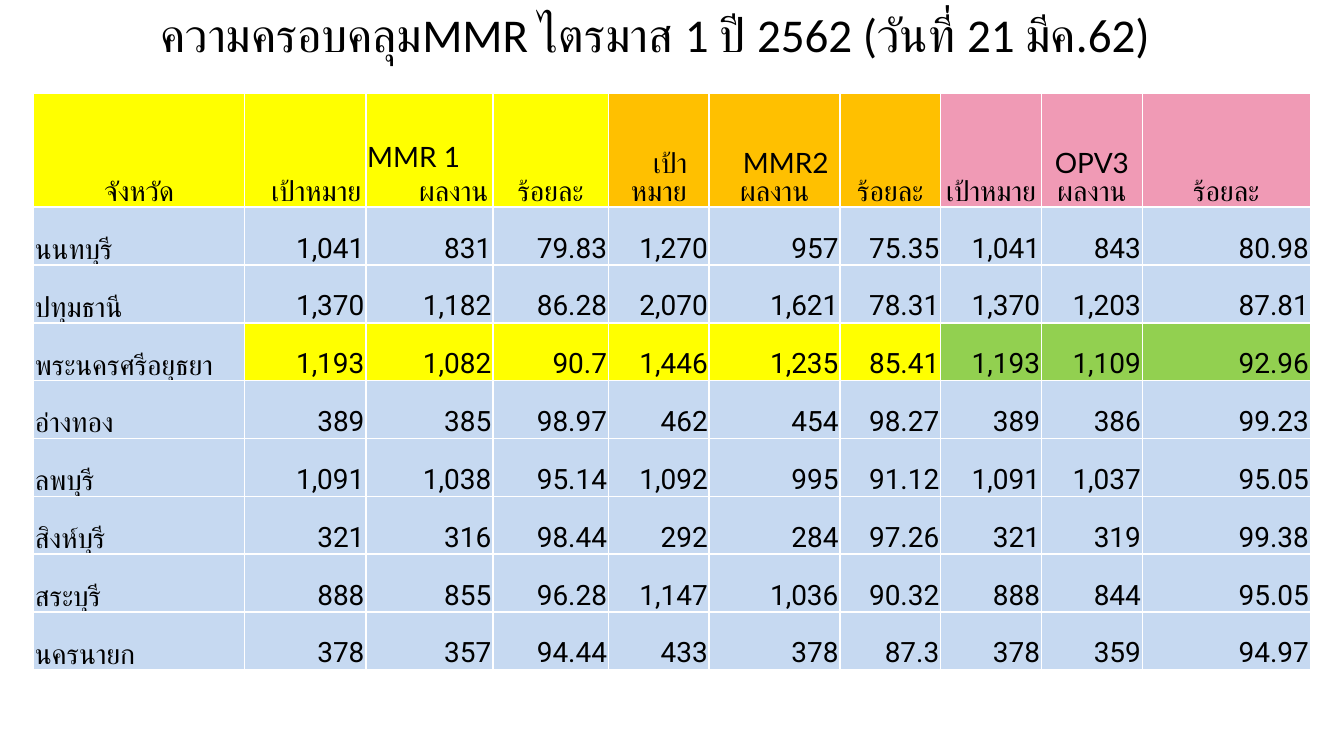
from lxml import etree
from pptx import Presentation
from pptx.dml.color import RGBColor
from pptx.enum import text
from pptx.oxml import ns
from pptx.util import Pt

COLORS = {
    "text": "000000",
    "border": "FFFFFF",
    "mmr1": "FFFF00",
    "mmr2": "FFC000",
    "opv3": "F09AB5",
    "body": "C6D9F1",
    "below_goal": "FFFF00",
    "near_goal": "92D050",
}
LEFT, CENTER, RIGHT = text.PP_ALIGN.LEFT, text.PP_ALIGN.CENTER, text.PP_ALIGN.RIGHT

COLUMN_WIDTHS = [113, 65, 68, 62, 54, 70, 54, 54, 54, 90]
HEADER_HEIGHT, ROW_HEIGHT = 61, 31
FIRST_LINE_INDENT = 12

HEADERS = ["จังหวัด", "เป้าหมาย", "MMR 1\nผลงาน", "ร้อยละ",
           "เป้าหมาย", "MMR2 ผลงาน", "ร้อยละ",
           "เป้าหมาย", "OPV3\nผลงาน", "ร้อยละ"]
HEADER_FILLS = ["mmr1"] * 4 + ["mmr2"] * 3 + ["opv3"] * 3
INDENTED_HEADERS = (1, 4, 5)
MMR1_RESULT = 2

HIGHLIGHTED = "พระนครศรีอยุธยา"
HIGHLIGHT_FILLS = ["body"] + ["below_goal"] * 6 + ["near_goal"] * 3
PROVINCES = [
    ("นนทบุรี", "1,041", "831", "79.83", "1,270", "957", "75.35", "1,041", "843", "80.98"),
    ("ปทุมธานี", "1,370", "1,182", "86.28", "2,070", "1,621", "78.31", "1,370", "1,203", "87.81"),
    (HIGHLIGHTED, "1,193", "1,082", "90.7", "1,446", "1,235", "85.41", "1,193", "1,109", "92.96"),
    ("อ่างทอง", "389", "385", "98.97", "462", "454", "98.27", "389", "386", "99.23"),
    ("ลพบุรี", "1,091", "1,038", "95.14", "1,092", "995", "91.12", "1,091", "1,037", "95.05"),
    ("สิงห์บุรี", "321", "316", "98.44", "292", "284", "97.26", "321", "319", "99.38"),
    ("สระบุรี", "888", "855", "96.28", "1,147", "1,036", "90.32", "888", "844", "95.05"),
    ("นครนายก", "378", "357", "94.44", "433", "378", "87.3", "378", "359", "94.97"),
]


def rgb(name):
    return RGBColor.from_string(COLORS[name])


def format_text(frame, size, font, align):
    for paragraph in frame.paragraphs:
        paragraph.alignment = align
        for run in paragraph.runs:
            run.font.size = Pt(size)
            run.font.name = font
            run.font.bold = False
            run.font.color.rgb = rgb("text")


def add_title(slide, wording):
    title = slide.shapes.add_textbox(Pt(36), Pt(0), Pt(630), Pt(36))
    frame = title.text_frame
    frame.word_wrap = True
    frame.vertical_anchor = text.MSO_ANCHOR.MIDDLE
    frame.text = wording
    format_text(frame, 25.2, "Calibri", CENTER)


def add_borders(cell):
    properties = cell._tc.get_or_add_tcPr()
    for side in ("lnL", "lnR", "lnT", "lnB"):
        line = etree.SubElement(properties, ns.qn(f"a:{side}"), w=str(Pt(1)))
        fill = etree.SubElement(line, ns.qn("a:solidFill"))
        etree.SubElement(fill, ns.qn("a:srgbClr"), val=COLORS["border"])


def fill_cell(cell, wording, fill, font, align):
    add_borders(cell)
    cell.fill.solid()
    cell.fill.fore_color.rgb = rgb(fill)
    cell.margin_left = cell.margin_right = cell.margin_top = Pt(0.75)
    cell.margin_bottom = Pt(0)
    cell.vertical_anchor = text.MSO_ANCHOR.BOTTOM
    cell.text_frame.text = wording
    format_text(cell.text_frame, 15, font, align)


def fill_header(table):
    for column, (wording, fill) in enumerate(zip(HEADERS, HEADER_FILLS)):
        fill_cell(table.cell(0, column), wording, fill, "Lato", CENTER)
    for column in INDENTED_HEADERS:
        paragraph = table.cell(0, column).text_frame.paragraphs[0]
        paragraph._p.get_or_add_pPr().set("indent", str(Pt(FIRST_LINE_INDENT)))

    mmr1_cell = table.cell(0, MMR1_RESULT)
    mmr1_cell.margin_right = Pt(2.5)
    vaccine, result = mmr1_cell.text_frame.paragraphs
    vaccine.alignment, result.alignment = LEFT, RIGHT
    vaccine.space_after = Pt(3)


def fill_province(table, row, province):
    fills = HIGHLIGHT_FILLS if province[0] == HIGHLIGHTED else ["body"] * len(province)
    for column, (wording, fill) in enumerate(zip(province, fills)):
        font, align = ("Roboto", RIGHT) if column else ("Lato", LEFT)
        fill_cell(table.cell(row, column), wording, fill, font, align)


def add_coverage_table(slide):
    height = HEADER_HEIGHT + ROW_HEIGHT * len(PROVINCES)
    table = slide.shapes.add_table(
        len(PROVINCES) + 1, len(HEADERS),
        Pt(18), Pt(50), Pt(sum(COLUMN_WIDTHS)), Pt(height)).table
    table.first_row = table.horz_banding = False
    for column, width in zip(table.columns, COLUMN_WIDTHS):
        column.width = Pt(width)
    for row in table.rows:
        row.height = Pt(ROW_HEIGHT)
    table.rows[0].height = Pt(HEADER_HEIGHT)

    fill_header(table)
    for row, province in enumerate(PROVINCES, start=1):
        fill_province(table, row, province)


def main():
    deck = Presentation()
    deck.slide_width, deck.slide_height = Pt(720), Pt(405)
    slide = deck.slides.add_slide(deck.slide_layouts[6])
    add_title(slide, "ความครอบคลุมMMR ไตรมาส 1 ปี 2562 (วันที่ 21 มีค.62)")
    add_coverage_table(slide)
    deck.save("out.pptx")


if __name__ == "__main__":
    main()
